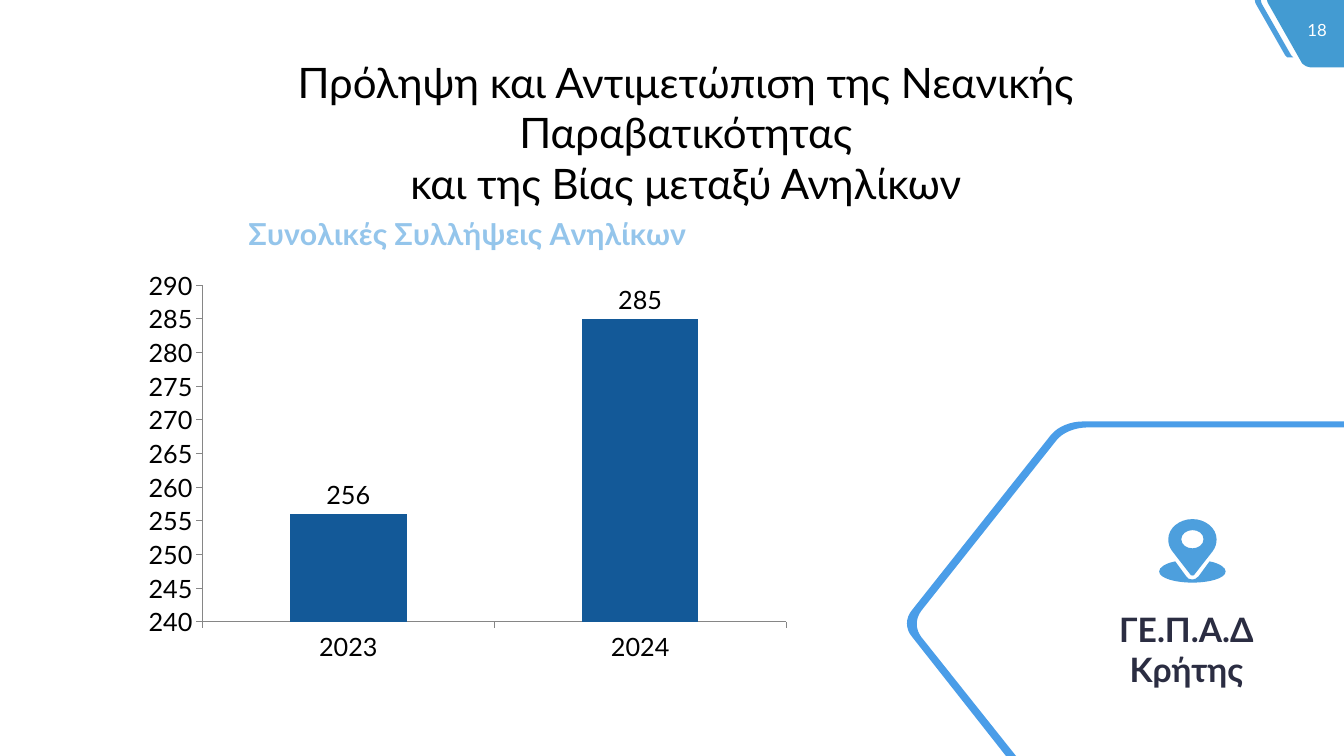
from lxml import etree
from pptx import Presentation
from pptx.chart.data import CategoryChartData
from pptx.dml.color import RGBColor
from pptx.enum.chart import XL_CHART_TYPE, XL_LABEL_POSITION, XL_TICK_MARK
from pptx.enum.text import MSO_ANCHOR, MSO_AUTO_SIZE, PP_ALIGN
from pptx.oxml.ns import qn
from pptx.util import Pt

COLUMNS = XL_CHART_TYPE.COLUMN_CLUSTERED
OUTSIDE_END = XL_LABEL_POSITION.OUTSIDE_END
TICK_OUT = XL_TICK_MARK.OUTSIDE
CENTER = PP_ALIGN.CENTER
TOP = MSO_ANCHOR.TOP
NO_FIT = MSO_AUTO_SIZE.NONE

FONT = "Lato"
COLORS = {
    "black": "000000", "white": "FFFFFF", "ink": "2B2D42", "axis": "868686",
    "bar": "135998", "chart title": "94C5EB", "tab": "1483C7",
    "accent": "4D9FDD", "border": "4A9DE8",
}

# Outlines in points: pairs are straight lines, sixes are cubic curves
TAB = [(905, 0), (960, 0), (960, 48.2), (936, 48.2),
       (933.8, 48.2, 931.7, 46.8, 930.2, 45.4), (906.5, 3.6),
       (905.8, 2.2, 905, 1.4, 905, 0)]
STRIPE = [(896.4, 0), (900.7, 0), (900.7, 0.7, 900.7, 2.2, 901.4, 2.9),
          (922.3, 39.6), (923.8, 41), (919.4, 41), (918, 39.6), (897.1, 2.9),
          (896.4, 2.2, 896.4, 0.7, 896.4, 0)]
PIN = [(851.8, 370.8), (842.4, 370.8, 834.5, 377.3, 834.5, 385.2),
       (834.5, 388.1, 835.2, 391, 837.4, 393.8), (850.3, 410.4),
       (850.3, 411.1, 851, 411.1, 851.8, 411.1),
       (852.5, 411.1, 853.2, 411.1, 853.2, 410.4), (866.2, 393.8),
       (868.3, 391, 869, 388.1, 869, 385.2),
       (869, 377.3, 861.1, 370.8, 851.8, 370.8)]
PIN_HOLE = [(851.8, 378.7), (856, 378.7, 859.7, 381.2, 859.7, 385.2),
            (859.7, 389, 856, 391.7, 851.8, 391.7),
            (847.4, 391.7, 843.8, 389, 843.8, 385.2),
            (843.8, 381.6, 847.4, 378.7, 851.8, 378.7)]
PIN_BASE = [(839.5, 401), (832.3, 402.5, 828, 405.4, 828, 408.2),
            (828, 413.3, 840.2, 416.2, 851.8, 416.2),
            (863.3, 416.2, 875.5, 413.3, 875.5, 408.2),
            (875.5, 405.4, 871.2, 402.5, 864, 401), (856.1, 411.8),
            (854.6, 413.3, 853.2, 414, 851.8, 414),
            (849.6, 414, 848.2, 413.3, 847.4, 411.8)]
BORDER = [(960, 301), (960, 305.3), (776.9, 305.3),
          (768.2, 305.3, 758.9, 308.9, 754.6, 314.6), (658.1, 436.3),
          (653.8, 442.1, 653.8, 449.3, 658.1, 455), (725.8, 540),
          (718.6, 540), (651.6, 455),
          (646.6, 449.3, 646.6, 441.4, 651.6, 435.6), (751, 310.3),
          (756, 304.6, 764.6, 301, 774, 301)]


def rgb(name):
    return RGBColor.from_string(COLORS[name])


def style_font(font, size, color, bold=False):
    font.name, font.size, font.bold = FONT, Pt(size), bold
    font.color.rgb = rgb(color)


def write(tf, text, size=18, color="black", bold=False, align=CENTER):
    """Fill a text frame, one paragraph per line of text."""
    for i, line in enumerate(text.split("\n")):
        p = tf.add_paragraph() if i else tf.paragraphs[0]
        p.alignment = align
        r = p.add_run()
        r.text = line
        style_font(r.font, size, color, bold)


def curve_segments(sp, contours):
    """Bend the straight segments that are listed as cubic curves."""
    segs = [seg for contour in contours for seg in contour[1:]]
    for line, seg in zip(sp._element.findall(".//" + qn("a:lnTo")), segs):
        if len(seg) == 2:
            continue
        curve = etree.Element(qn("a:cubicBezTo"))
        for x, y in zip(seg[::2], seg[1::2]):
            pt = etree.SubElement(curve, qn("a:pt"))
            pt.set("x", str(Pt(x) - sp.left))
            pt.set("y", str(Pt(y) - sp.top))
        line.getparent().replace(line, curve)


def manual_layout(**values):
    layout = etree.Element(qn("c:layout"))
    manual = etree.SubElement(layout, qn("c:manualLayout"))
    for tag, val in values.items():
        etree.SubElement(manual, qn("c:" + tag)).set("val", str(val))
    return layout


class SlideBuilder:
    def __init__(self, prs):
        self.s = prs.slides.add_slide(prs.slide_layouts[5])

    def frame(self, sp, box, wrap=True):
        sp.left, sp.top, sp.width, sp.height = map(Pt, box)
        tf = sp.text_frame
        tf.word_wrap = wrap
        tf.auto_size = NO_FIT
        tf.vertical_anchor = TOP
        return tf

    def title(self, text, box, **fmt):
        write(self.frame(self.s.shapes.title, box), text, **fmt)

    def text(self, text, box, wrap=True, **fmt):
        sp = self.s.shapes.add_textbox(*map(Pt, box))
        write(self.frame(sp, box, wrap), text, **fmt)

    def outline(self, color, *contours, alpha=None):
        first, *rest = [[(Pt(seg[-2]), Pt(seg[-1])) for seg in contour]
                        for contour in contours]
        fb = self.s.shapes.build_freeform(*first[0])
        fb.add_line_segments(first[1:])
        for points in rest:
            fb.move_to(*points[0])
            fb.add_line_segments(points[1:])
        sp = fb.convert_to_shape()
        curve_segments(sp, contours)
        sp.shadow.inherit = False
        sp.line.fill.background()
        sp.fill.solid()
        sp.fill.fore_color.rgb = rgb(color)
        if alpha:
            clr = sp._element.spPr.find(".//" + qn("a:srgbClr"))
            etree.SubElement(clr, qn("a:alpha")).set("val", str(alpha * 1000))

    def columns(self, name, cats, vals, box):
        data = CategoryChartData()
        data.categories = cats
        data.add_series(name, vals)
        chart = self.s.shapes.add_chart(COLUMNS, *map(Pt, box), data).chart
        style_font(chart.font, 18, "black")
        chart.has_legend = False
        chart.has_title = True
        title = chart.chart_title
        write(title.text_frame, name, size=21.6, color="chart title", bold=True)
        title._element.find(qn("c:tx")).addnext(
            manual_layout(xMode="edge", yMode="edge", x=0.17, y=0.05))

        # Columns and their values
        plot = chart.plots[0]
        plot.vary_by_categories = False
        plot.gap_width = 150
        fill = plot.series[0].format.fill
        fill.solid()
        fill.fore_color.rgb = rgb("bar")
        plot.has_data_labels = True
        plot.data_labels.show_value = True
        plot.data_labels.position = OUTSIDE_END

        # Axes
        for axis in (chart.category_axis, chart.value_axis):
            axis.has_major_gridlines = False
            axis.major_tick_mark = TICK_OUT
            axis.format.line.color.rgb = rgb("axis")
            axis.format.line.width = Pt(0.75)
        axis.minimum_scale, axis.maximum_scale, axis.major_unit = 240, 290, 5

        # Plot position
        area = chart._chartSpace.find(".//" + qn("c:plotArea"))
        for old in area.findall(qn("c:layout")):
            area.remove(old)
        area.insert(0, manual_layout(layoutTarget="inner", xMode="edge",
                                     yMode="edge", x=0.1, y=0.197, w=0.88, h=0.7))


def main():
    prs = Presentation()
    prs.slide_width, prs.slide_height = Pt(960), Pt(540)
    b = SlideBuilder(prs)

    # Page number corner
    b.outline("tab", TAB, alpha=80)
    b.outline("accent", STRIPE)
    b.text("18", (926, 10.4, 29.5, 21.6), wrap=False, size=12, color="white")

    # Title
    b.title("Πρόληψη και Αντιμετώπιση της Νεανικής Παραβατικότητας\n"
            "και της Βίας μεταξύ Ανηλίκων", (90.7, 36.8, 798.5, 80), size=30)

    # Arrests chart
    b.columns("Συνολικές Συλλήψεις Ανηλίκων", ["2023", "2024"], [256, 285],
              (97.2, 136.2, 473.8, 343.4))

    # Region panel
    b.outline("accent", PIN, PIN_HOLE)
    b.outline("accent", PIN_BASE)
    b.text("ΓΕ.Π.Α.Δ Κρήτης", (773.3, 431.3, 148.3, 65.5), size=24,
           color="ink", bold=True)
    b.outline("border", BORDER)

    prs.save("out.pptx")


if __name__ == "__main__":
    main()
